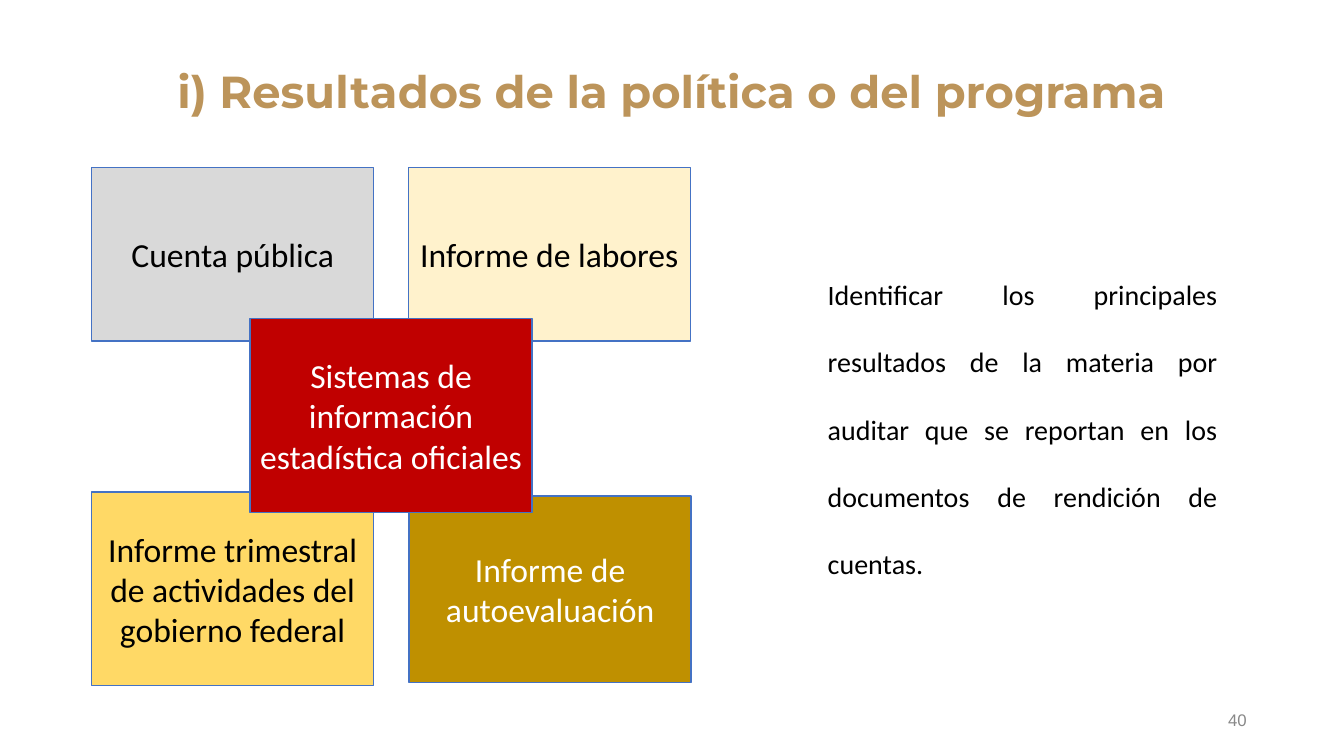
import pptx
import pptx.util
import pptx.dml.color
import pptx.enum.shapes
import pptx.enum.text
from pptx.util import Cm

ALIGN = pptx.enum.text.PP_ALIGN
ANCHOR = pptx.enum.text.MSO_ANCHOR


def color(hex_string):
    return pptx.dml.color.RGBColor.from_string(hex_string)


def write(frame, text, font_name, size, hex_string, align, anchor, wrap=True):
    frame.text = text
    frame.word_wrap = wrap
    frame.auto_size = pptx.enum.text.MSO_AUTO_SIZE.NONE
    frame.vertical_anchor = anchor
    frame.margin_left = frame.margin_right = Cm(0.13)
    frame.margin_top = frame.margin_bottom = Cm(0.13)
    paragraph = frame.paragraphs[0]
    paragraph.alignment = align
    font = paragraph.runs[0].font
    font.name = font_name
    font.size = pptx.util.Pt(size)
    font.color.rgb = color(hex_string)
    return paragraph


deck = pptx.Presentation()
deck.slide_width = Cm(33.87)
deck.slide_height = Cm(19.05)
slide = deck.slides.add_slide(deck.slide_layouts[5])

title = slide.shapes.title
title.left, title.top, title.width, title.height = Cm(2.31), Cm(1.42), Cm(29.24), Cm(1.7)
heading = write(title.text_frame, "i) Resultados de la política o del programa",
                "Montserrat", 32, "BC945A", ALIGN.CENTER, ANCHOR.BOTTOM)
heading.line_spacing = 0.9
heading.runs[0].font.bold = True

reports = [
    ("Informe de autoevaluación", 10.31, 12.5, 4.7, "BF9000", "FFFFFF"),
    ("Informe trimestral de actividades del gobierno federal", 2.31, 12.4, 4.88, "FFD966", "000000"),
    ("Cuenta pública", 2.31, 4.22, 4.37, "D9D9D9", "000000"),
    ("Informe de labores", 10.29, 4.22, 4.37, "FFF2CC", "000000"),
    ("Sistemas de información estadística oficiales", 6.3, 8.03, 4.88, "C00000", "FFFFFF"),
]
for label, left, top, height, fill, ink in reports:
    report = slide.shapes.add_shape(pptx.enum.shapes.MSO_SHAPE.RECTANGLE,
                                    Cm(left), Cm(top), Cm(7.11), Cm(height))
    report.shadow.inherit = False
    report.fill.solid()
    report.fill.fore_color.rgb = color(fill)
    report.line.color.rgb = color("4472C4")
    report.line.width = pptx.util.Pt(1)
    write(report.text_frame, label, "Calibri", 24, ink, ALIGN.CENTER, ANCHOR.MIDDLE)

instruction = slide.shapes.add_textbox(Cm(20.73), Cm(6.02), Cm(10.08), Cm(8.81))
guidance = write(instruction.text_frame,
                 "Identificar los principales resultados de la materia por auditar "
                 "que se reportan en los documentos de rendición de cuentas.",
                 "Calibri", 20, "000000", ALIGN.JUSTIFY, ANCHOR.TOP)
guidance.line_spacing = 2.0

page_number = slide.shapes.add_textbox(Cm(30.81), Cm(17.78), Cm(0.74), Cm(0.74))
write(page_number.text_frame, "40", "Arial", 12, "888888", ALIGN.RIGHT, ANCHOR.MIDDLE, wrap=False)

deck.save("out.pptx")
